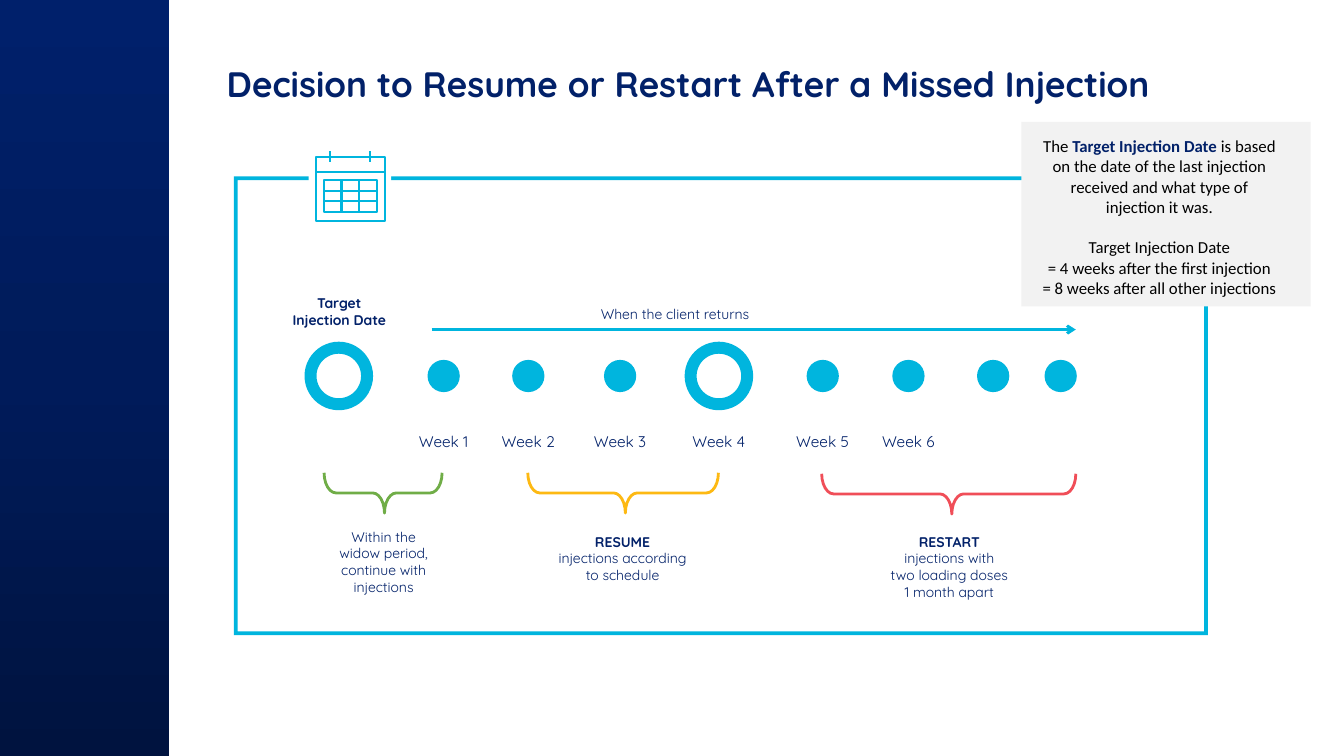
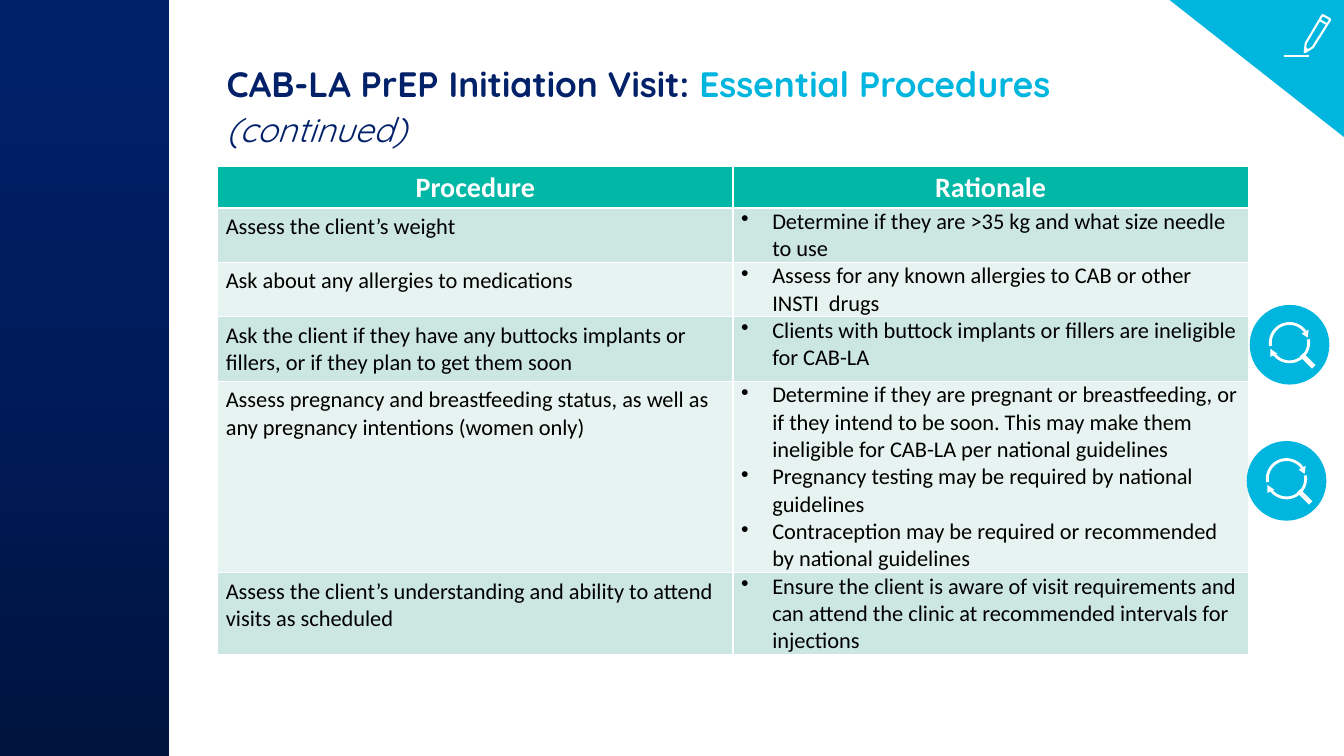
from copy import deepcopy
from math import cos, radians, sin

from lxml.etree import SubElement
from pptx import Presentation
from pptx.dml.color import RGBColor
from pptx.enum.shapes import MSO_CONNECTOR, MSO_SHAPE as Shape
from pptx.enum.text import MSO_ANCHOR as Anchor, PP_ALIGN as Align
from pptx.oxml.ns import qn
from pptx.util import Inches, Pt

COLORS = {
    "navy": "022169", "cyan": "00B5DE", "teal": "00B8A5", "white": "FFFFFF",
    "black": "000000", "note": "F2F2F2", "band_dark": "CCE6E1",
    "band_light": "E7F3F0", "continue": "70AD47", "resume": "FDB913",
    "restart": "F04E58", "side_bottom": "00133F", "side_middle": "001B5A",
    "side_top": "00206B",
}
HEAD_FONT, BODY_FONT = "Quicksand", "Calibri"


def rgb(name):
    return RGBColor.from_string(COLORS[name])


class Deck:
    def __init__(self):
        self.prs = Presentation()
        self.prs.slide_width, self.prs.slide_height = Inches(13.33), Inches(7.5)

    def new_slide(self, *title):
        self.slide = self.prs.slides.add_slide(self.prs.slide_layouts[6])
        self.shapes = self.slide.shapes
        self.sidebar()
        heading = self.text(2.15, 0.57, 10, 0.92, title, size=25.2, bold=True, align=Align.LEFT)
        for line in heading.paragraphs[1:]:
            line.space_before = Pt(3)

    def sidebar(self):
        band = self.shape(Shape.RECTANGLE, 0, 0, 1.68, 7.5)
        band.fill.gradient()
        band.fill.gradient_angle = 90
        first = band._element.spPr.find(qn("a:gradFill")).find(qn("a:gsLst"))[0]
        first.addnext(deepcopy(first))
        for stop, (place, color) in zip(band.fill.gradient_stops, (
                (0, "side_bottom"), (0.5, "side_middle"), (1, "side_top"))):
            stop.position = place
            stop.color.rgb = rgb(color)

    def paint(self, shape, fill=None, line=None, width=1.5):
        shape.shadow.inherit = False
        if fill:
            shape.fill.solid()
            shape.fill.fore_color.rgb = rgb(fill)
        else:
            shape.fill.background()
        if line:
            shape.line.color.rgb = rgb(line)
            shape.line.width = Pt(width)
        else:
            shape.line.fill.background()
        return shape

    def shape(self, kind, left, top, width, height, fill=None, line=None,
              weight=1.5, adjust=(), rotation=0):
        shape = self.shapes.add_shape(kind, *map(Inches, (left, top, width, height)))
        for index, value in enumerate(adjust):
            shape.adjustments[index] = value
        shape.rotation = rotation
        return self.paint(shape, fill, line, weight)

    def circle(self, x, y, diameter, kind=Shape.OVAL, adjust=()):
        self.shape(kind, x - diameter / 2, y - diameter / 2, diameter, diameter,
                   "cyan", adjust=adjust)

    def brace(self, x, y, span, color):
        depth = 0.4
        self.shape(Shape.LEFT_BRACE, x - depth / 2, y - span / 2, depth, span,
                   line=color, weight=2, adjust=(0.294, 0.512), rotation=270)

    def outline(self, points, fill=None, line=None, weight=1.5, close=False):
        start, *rest = [(Inches(x), Inches(y)) for x, y in points]
        builder = self.shapes.build_freeform(*start)
        builder.add_line_segments(rest, close=close)
        return self.paint(builder.convert_to_shape(), fill, line, weight)

    def line(self, x1, y1, x2, y2, color, weight=1.5, arrow=False):
        line = self.shapes.add_connector(
            MSO_CONNECTOR.STRAIGHT, *map(Inches, (x1, y1, x2, y2)))
        line.line.color.rgb = rgb(color)
        line.line.width = Pt(weight)
        if arrow:
            SubElement(line._element.spPr.find(qn("a:ln")), qn("a:tailEnd"), type="arrow")
        SubElement(line._element.spPr, qn("a:effectLst"))

    def style(self, font, size=None, color=None, bold=None, italic=None, face=None):
        if face:
            font.name = face
        if size:
            font.size = Pt(size)
        if color:
            font.color.rgb = rgb(color)
        if bold is not None:
            font.bold = bold
        if italic is not None:
            font.italic = italic

    def set_text(self, frame, paragraphs, align, bullet=False, **look):
        frame.word_wrap = True
        for index, content in enumerate(paragraphs):
            paragraph = frame.add_paragraph() if index else frame.paragraphs[0]
            paragraph.alignment = align
            if bullet:
                props = paragraph._p.get_or_add_pPr()
                props.set("marL", str(Inches(0.31)))
                props.set("indent", str(-Inches(0.31)))
                SubElement(props, qn("a:buChar"), char="•")
            self.style(paragraph.font, **look)
            runs = [(content, {})] if isinstance(content, str) else content
            for words, change in runs:
                run = paragraph.add_run()
                run.text = words
                self.style(run.font, **change)

    def text(self, left, top, width, height, paragraphs, size=10, color="navy",
             bold=False, face=HEAD_FONT, align=Align.CENTER):
        frame = self.shapes.add_textbox(*map(Inches, (left, top, width, height))).text_frame
        self.set_text(frame, paragraphs, align, size=size, color=color, bold=bold, face=face)
        return frame

    def cell(self, cell, paragraphs, fill, side, edge, anchor=Anchor.TOP,
             align=Align.LEFT, bullet=False, **look):
        cell.fill.solid()
        cell.fill.fore_color.rgb = rgb(fill)
        cell.margin_left = cell.margin_right = Inches(side)
        cell.margin_top = cell.margin_bottom = Inches(edge)
        cell.vertical_anchor = anchor
        self.set_text(cell.text_frame, paragraphs, align, bullet, face=BODY_FONT, **look)

    def table(self, left, top, width, header, rows, heights):
        table = self.shapes.add_table(
            len(rows) + 1, len(header), *map(Inches, (left, top, width, sum(heights)))).table
        for column in table.columns:
            column.width = Inches(width / len(header))
        for row, height in zip(table.rows, heights):
            row.height = Inches(height)
        for index, words in enumerate(header):
            self.cell(table.cell(0, index), [words], "teal", 0.07, 0.04, Anchor.MIDDLE,
                      Align.CENTER, size=20, color="white", bold=True)
        body = {"size": 16, "color": "black", "bold": False}
        for index, (procedure, reasons) in enumerate(rows, 1):
            fill = "band_dark" if index % 2 else "band_light"
            self.cell(table.cell(index, 0), [procedure], fill, 0.08, 0.05, **body)
            self.cell(table.cell(index, 1), reasons, fill, 0.08, 0, bullet=True, **body)

    def calendar(self, left, top):
        self.shape(Shape.RECTANGLE, left - 0.07, top - 0.17, 0.82, 0.89, "white")
        self.shape(Shape.RECTANGLE, left, top, 0.69, 0.63, line="cyan")
        self.line(left, top + 0.15, left + 0.69, top + 0.15, "cyan")
        for ring in (0.14, 0.54):
            self.line(left + ring, top - 0.06, left + ring, top + 0.05, "cyan")
        x, y, width, height = left + 0.08, top + 0.23, 0.53, 0.31
        self.shape(Shape.RECTANGLE, x, y, width, height, line="cyan")
        for third in (1 / 3, 2 / 3):
            self.line(x + width * third, y, x + width * third, y + height, "cyan")
            self.line(x, y + height * third, x + width, y + height * third, "cyan")

    def pencil(self):
        self.outline([(12.94, 0.52), (12.95, 0.43), (13.11, 0.16), (13.12, 0.15),
                      (13.19, 0.19), (13.19, 0.2), (13.02, 0.47)],
                     line="white", close=True)
        for ends in ((13.09, 0.2, 13.16, 0.24), (12.95, 0.48, 12.97, 0.5),
                     (12.73, 0.56, 12.98, 0.56)):
            self.line(*ends, "white")

    def review_icon(self, x, y):
        self.circle(x, y, 0.79)
        lens_y, radius = y - 0.02, 0.19
        for start, end in ((170, 325), (-10, 145)):
            arc = [(x + radius * cos(radians(a)), lens_y + radius * sin(radians(a)))
                   for a in range(start, end + 1, 5)]
            self.outline(arc, line="white", weight=2)
        for tip in (((0.12, -0.11), (0.18, -0.07), (0.19, -0.15)),
                    ((-0.12, 0.09), (-0.19, 0.04), (-0.19, 0.12))):
            self.outline([(x + dx, y + dy) for dx, dy in tip], fill="white", close=True)
        self.line(x + 0.12, y + 0.1, x + 0.24, y + 0.22, "white", 3.5)


def missed_injection(deck):
    deck.new_slide("Decision to Resume or Restart After a Missed Injection")
    deck.shape(Shape.FRAME, 2.32, 1.75, 9.66, 4.55, "cyan", adjust=(0.008,))
    deck.calendar(3.13, 1.56)

    axis_y, target_x, last_dots = 3.73, 3.36, (9.85, 10.52)
    weeks = (4.4, 5.24, 6.15, 7.13, 8.16, 9.01)
    milestones = (target_x, weeks[3])
    for x in (target_x, *weeks, *last_dots):
        if x in milestones:
            deck.circle(x, axis_y, 0.68, Shape.DONUT, (0.175,))
        else:
            deck.circle(x, axis_y, 0.32)
    for number, x in enumerate(weeks, 1):
        deck.text(x - 0.5, 4.24, 1, 0.29, [f"Week {number}"], size=11)
    deck.text(2.67, 2.87, 1.39, 0.44, ["Target", "Injection Date"], bold=True)
    deck.text(5.77, 2.98, 1.85, 0.27, ["When the client returns"])
    deck.line(4.28, 3.27, 10.67, 3.27, "cyan", 2, arrow=True)

    strong = {"bold": True}
    outcomes = (
        ("continue", 3.8, 4.89, 1.17, 3.17, 5.19, 1.27,
         ["Within the widow period, continue with injections"]),
        ("resume", 6.18, 4.89, 1.89, 5.31, 5.24, 1.73,
         [[("RESUME", strong)], "injections according", "to schedule"]),
        ("restart", 9.41, 4.9, 2.52, 8.55, 5.24, 1.73,
         [[("RESTART", strong)], "injections with", "two loading doses", "1 month apart"]),
    )
    for color, x, y, span, left, top, width, advice in outcomes:
        deck.brace(x, y, span, color)
        deck.text(left, top, width, 0.77, advice)

    deck.shape(Shape.RECTANGLE, 10.13, 1.21, 2.87, 1.83, "note")
    note = deck.text(10.22, 1.3, 2.56, 1.72, [
        [("The ", {}), ("Target Injection Date ", {"bold": True, "color": "navy"}),
         ("is based on the date of the last injection received and what type of "
          "injection it was.", {})],
        "Target Injection Date",
        "= 4 weeks after the first injection",
        "= 8 weeks after all other injections",
    ], size=12, color="black", face=BODY_FONT)
    note.paragraphs[1].space_before = Pt(14.6)


def essential_procedures(deck):
    deck.new_slide(
        [("CAB-LA PrEP Initiation Visit: ", {}), ("Essential Procedures", {"color": "cyan"})],
        [("(continued)", {"size": 24.3, "bold": False, "italic": True})])
    deck.table(2.16, 1.65, 10.22, ("Procedure", "Rationale"), (
        ("Assess the client’s weight",
         ["Determine if they are >35 kg and what size needle to use"]),
        ("Ask about any allergies to medications",
         ["Assess for any known allergies to CAB or other INSTI  drugs"]),
        ("Ask the client if they have any buttocks implants or fillers, or if they plan "
         "to get them soon",
         ["Clients with buttock implants or fillers are ineligible for CAB-LA"]),
        ("Assess pregnancy and breastfeeding status, as well as any pregnancy intentions "
         "(women only)",
         ["Determine if they are pregnant or breastfeeding, or if they intend to be soon. "
          "This may make them ineligible for CAB-LA per national guidelines",
          "Pregnancy testing may be required by national guidelines",
          "Contraception may be required or recommended by national guidelines"]),
        ("Assess the client’s understanding and ability to attend visits as scheduled",
         ["Ensure the client is aware of visit requirements and can attend the clinic at "
          "recommended intervals for injections"]),
    ), (0.41, 0.54, 0.54, 0.64, 1.9, 0.81))
    deck.shape(Shape.RIGHT_TRIANGLE, 11.6, 0, 1.73, 1.36, "cyan", rotation=180)
    deck.pencil()
    deck.review_icon(12.79, 3.42)
    deck.review_icon(12.76, 4.77)


def main():
    deck = Deck()
    missed_injection(deck)
    essential_procedures(deck)
    deck.prs.save("out.pptx")


if __name__ == "__main__":
    main()
